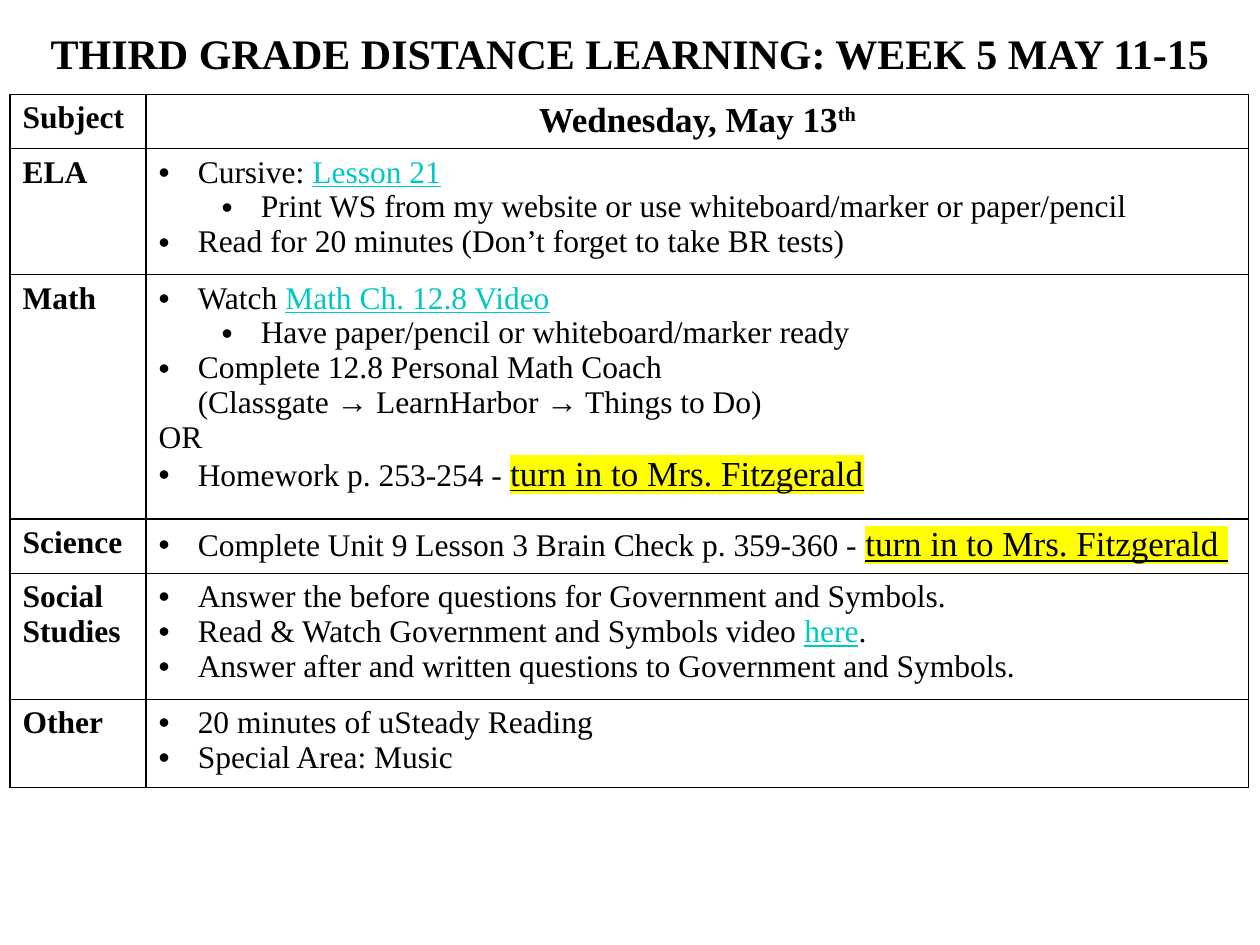
from lxml import etree
from pptx import Presentation
from pptx.dml.color import RGBColor
from pptx.enum.text import MSO_AUTO_SIZE, PP_ALIGN
from pptx.oxml.ns import qn
from pptx.util import Inches, Pt

CENTER = PP_ALIGN.CENTER
FONT = "Times New Roman"
BLACK, WHITE, TEAL, YELLOW = "000000", "FFFFFF", "00C8C3", "FFFF00"
LINKS = {"Lesson 21", "Math Ch. 12.8 Video", "here"}
TURN_IN = "turn in to Mrs. Fitzgerald"
INDENT = Inches(0.31)


def rgb(value):
    return RGBColor.from_string(value)


def style(run, size=18, bold=False, color=BLACK):
    font = run.font
    font.name, font.size, font.bold = FONT, Pt(size), bold
    font.color.rgb = rgb(color)


prs = Presentation()
prs.slide_width, prs.slide_height = Inches(10), Inches(7.5)
slide = prs.slides.add_slide(prs.slide_layouts[6])

# Each line: (level, text pieces); level None means no bullet
schedule = [
    ("ELA", 1.0, [
        (0, ["Cursive: ", "Lesson 21"]),
        (1, ["Print WS from my website or use whiteboard/marker or paper/pencil"]),
        (0, ["Read for 20 minutes (Don’t forget to take BR tests)"]),
    ]),
    ("Math", 1.94, [
        (0, ["Watch ", "Math Ch. 12.8 Video"]),
        (1, ["Have paper/pencil or whiteboard/marker ready"]),
        (0, ["Complete 12.8 Personal Math Coach\v"
             "(Classgate → LearnHarbor → Things to Do)"]),
        (None, ["OR"]),
        (0, ["Homework p. 253-254 - ", TURN_IN]),
    ]),
    ("Science", 0.43, [
        (0, ["Complete Unit 9 Lesson 3 Brain Check p. 359-360 - ", TURN_IN + " "]),
    ]),
    ("Social Studies", 1.0, [
        (0, ["Answer the before questions for Government and Symbols."]),
        (0, ["Read & Watch Government and Symbols video ", "here", "."]),
        (0, ["Answer after and written questions to Government and Symbols."]),
    ]),
    ("Other", 0.7, [
        (0, ["20 minutes of uSteady Reading"]),
        (0, ["Special Area: Music"]),
    ]),
]

table = slide.shapes.add_table(
    len(schedule) + 1, 2, Inches(0.08), Inches(0.75), Inches(9.83), Inches(5.5)
).table
for column, width in zip(table.columns, (1.08, 8.75)):
    column.width = Inches(width)
table.rows[0].height = Inches(0.43)

# Header row
table.cell(0, 0).text_frame.text = "Subject"
style(table.cell(0, 0).text_frame.paragraphs[0].runs[0], bold=True)
day = table.cell(0, 1).text_frame.paragraphs[0]
day.text = "Wednesday, May 13"
day.alignment = CENTER
day.add_run().text = "th"
for run in day.runs:
    style(run, size=20, bold=True)
day.runs[1].font._element.set("baseline", "30000")

# Subject rows
for row, (subject, height, lines) in enumerate(schedule, start=1):
    table.rows[row].height = Inches(height)
    subject_frame = table.cell(row, 0).text_frame
    subject_frame.text = subject
    style(subject_frame.paragraphs[0].runs[0], bold=True)

    tasks = table.cell(row, 1).text_frame
    for number, (level, pieces) in enumerate(lines):
        task = tasks.add_paragraph() if number else tasks.paragraphs[0]
        task.text = pieces[0]
        for piece in pieces[1:]:
            task.add_run().text = piece
        if level is not None:
            task.level = level
            props = task._p.get_or_add_pPr()
            props.set("marL", str(INDENT + level * Inches(0.5)))
            props.set("indent", str(-INDENT))
            etree.SubElement(props, qn("a:buFont"), typeface="Arial")
            etree.SubElement(props, qn("a:buChar"), char="•")
        for run in task.runs:
            is_link = run.text in LINKS
            is_turn_in = run.text.startswith(TURN_IN)
            style(run, size=20 if is_turn_in else 18, color=TEAL if is_link else BLACK)
            if is_link or is_turn_in:
                run.font.underline = True
            if is_turn_in:
                highlight = etree.Element(qn("a:highlight"))
                etree.SubElement(highlight, qn("a:srgbClr"), val=YELLOW)
                run.font._element.find(qn("a:solidFill")).addnext(highlight)

# White cells with thin black borders
for cell in table.iter_cells():
    cell.fill.solid()
    cell.fill.fore_color.rgb = rgb(WHITE)
    cell_props = cell._tc.get_or_add_tcPr()
    for position, side in enumerate(("a:lnL", "a:lnR", "a:lnT", "a:lnB")):
        border = etree.Element(qn(side), w=str(Pt(1)))
        border_fill = etree.SubElement(border, qn("a:solidFill"))
        etree.SubElement(border_fill, qn("a:srgbClr"), val=BLACK)
        cell_props.insert(position, border)

title = slide.shapes.add_textbox(0, Inches(0.17), prs.slide_width, Inches(0.5)).text_frame
title.word_wrap = True
title.auto_size = MSO_AUTO_SIZE.SHAPE_TO_FIT_TEXT
title.text = "THIRD GRADE DISTANCE LEARNING: WEEK 5 MAY 11-15"
title.paragraphs[0].alignment = CENTER
style(title.paragraphs[0].runs[0], size=24, bold=True)

prs.save("out.pptx")
